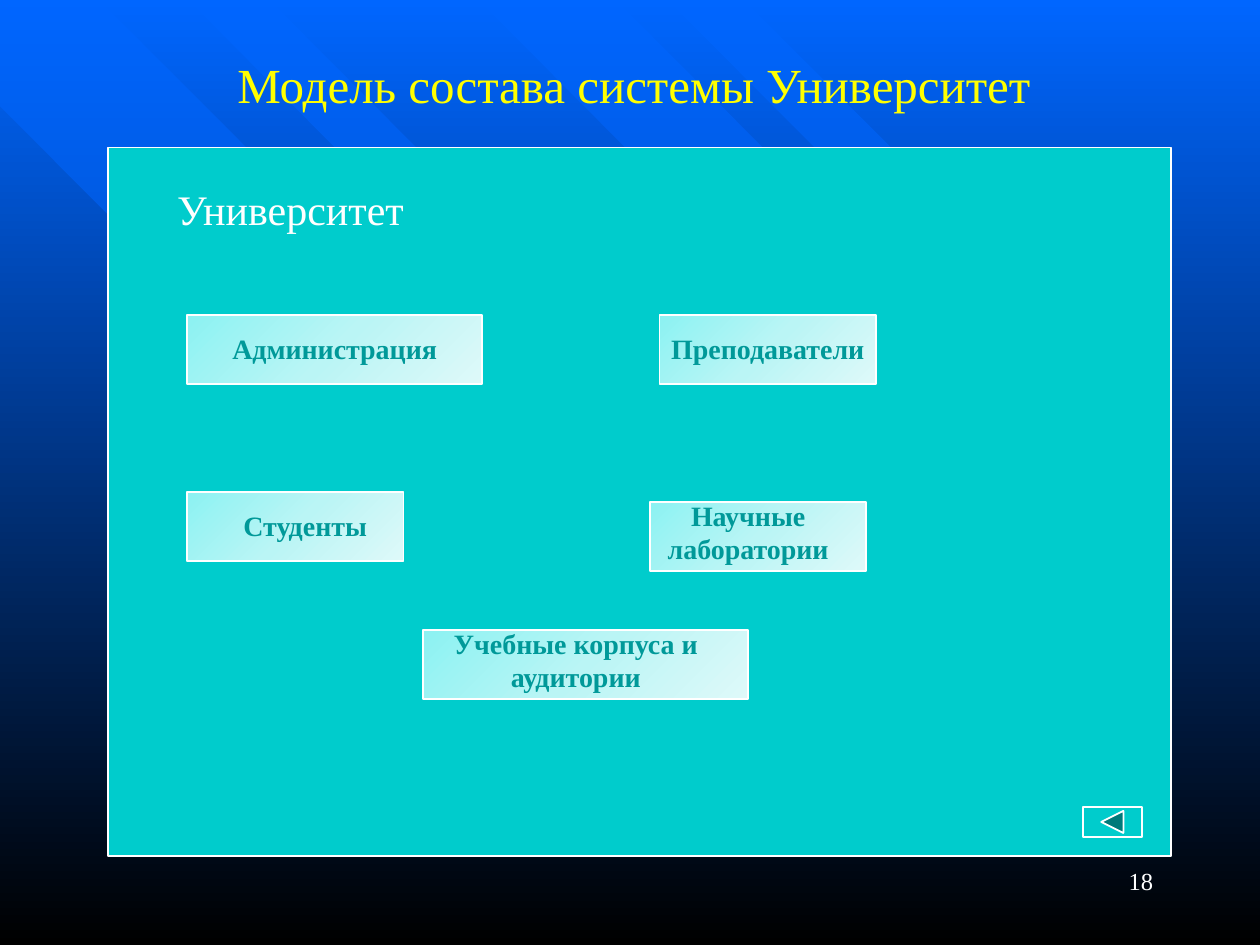
from copy import deepcopy
from lxml.etree import SubElement
from pptx import Presentation
from pptx.dml.color import RGBColor
from pptx.enum.shapes import MSO_SHAPE as Preset
from pptx.enum.text import MSO_ANCHOR as Anchor, PP_ALIGN as Align
from pptx.oxml.ns import qn
from pptx.util import Emu, Inches, Pt

COLORS = {
    "sky": "0066FF", "night": "000000", "title": "FFFF00", "white": "FFFFFF",
    "panel": "00CCCC", "label": "009999",
    "part_start": "8CF2F2", "part_middle": "BAF5F5", "part_end": "DEF9F9",
}
FONT = "Times New Roman"
COLUMNS, ROWS = 128, 96
CELL = Inches(10) / COLUMNS
RIBBONS = [
    [(85.8, 75.9), (10.1, 0), (0, 0), (0, 10.8), (75.4, 86.4)],
    [(27.4, 0), (94.5, 67.5), (90.4, 71.6), (19.1, 0)],
    [(62.6, 0), (112.1, 49.8), (105.1, 56.8), (48.6, 0)],
    [(67.8, 0), (114.8, 47.1), (118.7, 43.3), (75.6, 0)],
]
PARTS = [
    ("Администрация", (8, 17, 30, 7), (3, 1, 24, 4.7)),
    ("Преподаватели", (56, 17, 22, 7), (-1, 1, 24, 4.7)),
    ("Студенты", (8, 35, 22, 7), (0, 1, 24, 4.7)),
    ("Научные лаборатории", (55, 36, 22, 7), (-2, -1, 24, 8.2)),
    ("Учебные корпуса и аудитории", (32, 49, 33, 7), (-1, -1, 33, 8.2)),
]


def color(name):
    """Return a named colour."""
    return RGBColor.from_string(COLORS[name])


def cells(*lengths):
    """Turn grid lengths into slide units."""
    return [Emu(round(length * CELL)) for length in lengths]


def inside(box, part):
    """Move a part's box from its parent's corner to the slide's corner."""
    return (box[0] + part[0], box[1] + part[1], part[2], part[3])


def add_text(slide, box, text, size=16, tone="white", bold=False,
             align=Align.CENTER, anchor=Anchor.TOP):
    """Add a wrapped one-paragraph text box."""
    frame = slide.shapes.add_textbox(*cells(*box)).text_frame
    frame.word_wrap = True
    frame.vertical_anchor = anchor
    paragraph = frame.paragraphs[0]
    paragraph.alignment = align
    run = paragraph.add_run()
    run.text = text
    run.font.name = FONT
    run.font.size = Pt(size)
    run.font.bold = bold
    run.font.color.rgb = color(tone)


def add_outlined(slide, box, preset=Preset.RECTANGLE):
    """Add a preset shape in the panel colour with a thin white line."""
    shape = slide.shapes.add_shape(preset, *cells(*box))
    shape.shadow.inherit = False
    shape.fill.solid()
    shape.fill.fore_color.rgb = color("panel")
    shape.line.color.rgb = color("white")
    shape.line.width = Pt(1)
    return shape


def set_gradient(fill, start, end):
    """Give a fill a two-colour gradient."""
    fill.gradient()
    for stop, position, name in zip(fill.gradient_stops, (0, 1), (start, end)):
        stop.position = position
        stop.color.rgb = color(name)


def set_corner_gradient(shape):
    """Spread a three-colour gradient from the top left corner."""
    set_gradient(shape.fill, "part_start", "part_end")
    gradient = shape._element.spPr.find(qn("a:gradFill"))
    stops = gradient.find(qn("a:gsLst"))
    middle = deepcopy(stops[0])
    middle.set("pos", "50000")
    middle[0].set("val", COLORS["part_middle"])
    stops.insert(1, middle)
    gradient.remove(gradient.find(qn("a:lin")))
    circle = SubElement(gradient, qn("a:path"), {"path": "circle"})
    SubElement(circle, qn("a:fillToRect"), {"r": "100000", "b": "100000"})


def draw_backdrop(slide):
    """Fill the background and lay the translucent ribbons."""
    fill = slide.background.fill
    set_gradient(fill, "sky", "night")
    fill.gradient_angle = 270
    for ribbon in RIBBONS:
        start, *others = [cells(*point) for point in ribbon]
        builder = slide.shapes.build_freeform(*start)
        builder.add_line_segments(others, close=True)
        shape = builder.convert_to_shape()
        shape.shadow.inherit = False
        shape.fill.solid()
        shape.fill.fore_color.rgb = color("sky")
        shape.line.fill.background()
        tint = shape._element.spPr.find(qn("a:solidFill"))[0]
        SubElement(tint, qn("a:alpha"), {"val": "50000"})


def draw_part(slide, box, name, label):
    """Draw one part of the university with its label."""
    set_corner_gradient(add_outlined(slide, box))
    add_text(slide, inside(box, label), name, tone="label", bold=True)


def draw_panel(slide, box):
    """Draw the university panel, its parts and the back button."""
    add_outlined(slide, box)
    add_text(slide, inside(box, (4, 3, 29, 6.4)), "Университет", size=24)
    for name, part, label in PARTS:
        draw_part(slide, inside(box, part), name, label)
    add_outlined(slide, inside(box, (99, 67, 6, 3)),
                 Preset.ACTION_BUTTON_BACK_OR_PREVIOUS)


def main():
    """Build and save the slide."""
    presentation = Presentation()
    presentation.slide_width, presentation.slide_height = cells(COLUMNS, ROWS)
    slide = presentation.slides.add_slide(presentation.slide_layouts[6])
    draw_backdrop(slide)
    add_text(slide, (10, 0, 108.8, 17), "Модель состава системы Университет",
             size=28, tone="title", anchor=Anchor.MIDDLE)
    add_text(slide, (91.8, 87.4, 26.6, 6.4), "18", size=14, align=Align.RIGHT)
    draw_panel(slide, (11, 15, 108, 72))
    presentation.save("out.pptx")


if __name__ == "__main__":
    main()
